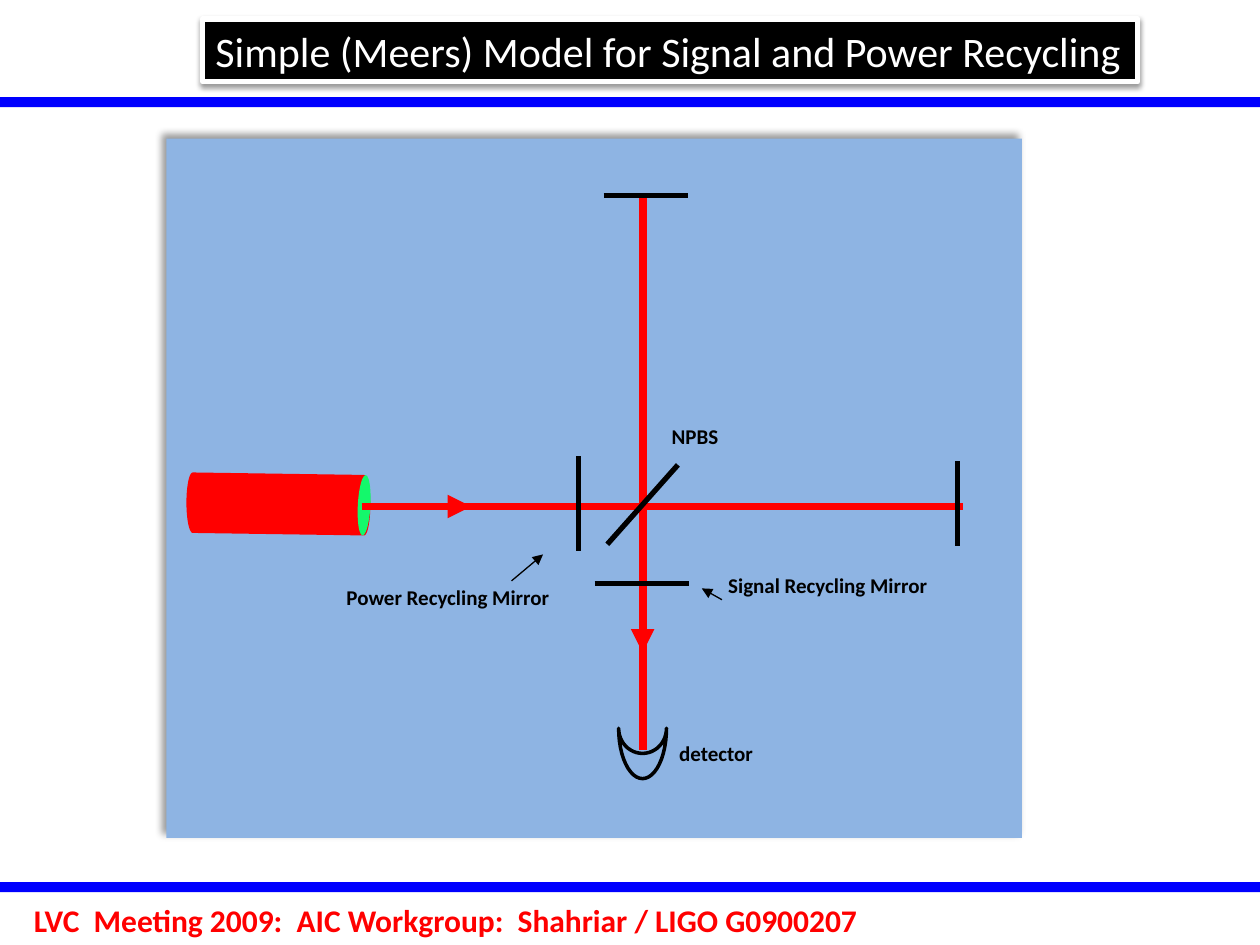
import math
from typing import NamedTuple

import pptx
import pptx.dml.color
import pptx.enum.shapes
import pptx.enum.text
import pptx.oxml
import pptx.oxml.ns
import pptx.util
from pptx.util import Inches

RED, BLACK, WHITE, BLUE = "FF0000", "000000", "FFFFFF", "0000FF"
FONT = "Calibri"


class Line(NamedTuple):
    start: tuple[float, float]
    end: tuple[float, float]
    color: str
    width: float
    arrow: bool = False


class Label(NamedTuple):
    text: str
    left: float
    top: float
    width: float
    height: float


def rgb(value: str) -> pptx.dml.color.RGBColor:
    return pptx.dml.color.RGBColor.from_string(value)


def paint(shape, fill: str | None, line: str | None = None, width: float = 1) -> None:
    shape.shadow.inherit = False
    if fill:
        shape.fill.solid()
        shape.fill.fore_color.rgb = rgb(fill)
    else:
        shape.fill.background()
    if line:
        shape.line.color.rgb = rgb(line)
        shape.line.width = pptx.util.Pt(width)
    else:
        shape.line.fill.background()


def add_shadow(shape, opacity: int, blur: float, distance: float, angle: int) -> None:
    effects = shape._element.spPr.find(pptx.oxml.ns.qn("a:effectLst"))
    effects.append(pptx.oxml.parse_xml(
        f'<a:outerShdw {pptx.oxml.ns.nsdecls("a")} blurRad="{pptx.util.Pt(blur)}" '
        f'dist="{pptx.util.Pt(distance)}" dir="{angle * 60000}" rotWithShape="0">'
        f'<a:srgbClr val="{BLACK}"><a:alpha val="{opacity * 1000}"/></a:srgbClr>'
        '</a:outerShdw>'))


def add_block(page, kind, left: float, top: float, width: float, height: float, fill: str):
    block = page.shapes.add_shape(
        kind, Inches(left), Inches(top), Inches(width), Inches(height))
    paint(block, fill)
    return block


def write(box, text: str, *, size: float, color: str, bold: bool = False,
          inset: float | None = None, wrap: bool = True) -> None:
    frame = box.text_frame
    frame.word_wrap = wrap
    if inset is not None:
        frame.margin_left = frame.margin_right = Inches(inset)
        frame.margin_top = frame.margin_bottom = Inches(inset)
    para = frame.paragraphs[0]
    para.alignment = pptx.enum.text.PP_ALIGN.LEFT
    span = para.add_run()
    span.text = text
    span.font.name, span.font.size = FONT, pptx.util.Pt(size)
    span.font.bold, span.font.color.rgb = bold, rgb(color)


def add_label(page, label: Label, **style) -> None:
    box = page.shapes.add_textbox(*(Inches(value) for value in label[1:]))
    write(box, label.text, **style)


def add_line(page, line: Line) -> None:
    connector = page.shapes.add_connector(
        pptx.enum.shapes.MSO_CONNECTOR.STRAIGHT,
        *(Inches(value) for value in line.start + line.end))
    connector.line.color.rgb = rgb(line.color)
    connector.line.width = pptx.util.Pt(line.width)
    if line.arrow:
        outline = connector.line._get_or_add_ln()
        outline.append(pptx.oxml.parse_xml(
            f'<a:tailEnd {pptx.oxml.ns.nsdecls("a")} type="triangle"/>'))
    connector._element.spPr.append(
        pptx.oxml.parse_xml(f'<a:effectLst {pptx.oxml.ns.nsdecls("a")}/>'))


def arc(x: float, y: float, across: float, down: float, first: int, last: int):
    """Points on an ellipse between two angles in degrees, clockwise from the right."""
    steps = 24
    angles = [math.radians(first + (last - first) * i / steps) for i in range(steps + 1)]
    return [(x + across * math.cos(a), y + down * math.sin(a)) for a in angles]


def add_outline(page, points):
    # Vertices are whole numbers, so they are given in EMU
    vertices = [(Inches(x), Inches(y)) for x, y in points]
    builder = page.shapes.build_freeform(*vertices[0])
    builder.add_line_segments(vertices[1:], close=True)
    return builder.convert_to_shape()


BEAM_X, BEAM_Y = 5.1, 4.02
BEAMS = [
    Line((BEAM_X, 5.95), (BEAM_X, 1.53), RED, 4.5),
    Line((BEAM_X, 4.73), (BEAM_X, 5.18), RED, 4.5, True),
    Line((3.28, BEAM_Y), (3.74, BEAM_Y), RED, 4.5, True),
    Line((2.87, BEAM_Y), (7.64, BEAM_Y), RED, 4.5),
]
MIRRORS = [
    Line((4.59, 3.62), (4.59, 4.37), BLACK, 3),
    Line((4.72, 4.63), (5.47, 4.63), BLACK, 3),
    Line((7.6, 3.66), (7.6, 4.33), BLACK, 3),
    Line((4.79, 1.55), (5.46, 1.55), BLACK, 3),
    Line((5.38, 3.69), (4.82, 4.32), BLACK, 3),
]
POINTERS = [
    Line((4.06, 4.61), (4.31, 4.4), BLACK, 0.75, True),
    Line((5.73, 4.76), (5.57, 4.67), BLACK, 0.75, True),
]
LABELS = [
    Label("detector", 5.39, 5.88, 1.67, 0.53),
    Label("Power Recycling Mirror", 2.75, 4.64, 1.67, 1.08),
    Label("Signal Recycling Mirror", 5.78, 4.54, 1.67, 1.08),
    Label("NPBS", 5.33, 3.36, 0.75, 0.6),
]


def main() -> None:
    deck = pptx.Presentation()
    deck.slide_width, deck.slide_height = Inches(10), Inches(7.5)
    page = deck.slides.add_slide(deck.slide_layouts[5])
    kinds = pptx.enum.shapes.MSO_SHAPE

    # Rules and footer
    for top in (0.77, 7):
        add_block(page, kinds.RECTANGLE, 0, top, 10, 0.08, BLUE)
    footer = "LVC  Meeting 2009:  AIC Workgroup:  Shahriar / LIGO G0900207"
    add_label(page, Label(footer, 0.17, 7.1, 6.81, 0.4),
              size=18, color=RED, bold=True, wrap=False)

    # Title
    title = page.shapes.title
    title.left, title.top = Inches(1.61), Inches(0.15)
    title.width, title.height = Inches(7.42), Inches(0.5)
    paint(title, BLACK, WHITE, 3)
    add_shadow(title, 38, 3.1, 1.6, 90)
    write(title, "Simple (Meers) Model for Signal and Power Recycling",
          size=24, color=WHITE)
    title.text_frame.auto_size = pptx.enum.text.MSO_AUTO_SIZE.NONE
    title.text_frame.vertical_anchor = pptx.enum.text.MSO_ANCHOR.MIDDLE

    # Diagram panel
    panel = add_block(page, kinds.RECTANGLE, 1.32, 1.1, 6.79, 5.55, "8EB4E3")
    add_shadow(panel, 40, 4, 3, 225)

    # Detector: a deep half ellipse with a shallow one cut out
    detector = add_outline(page, arc(BEAM_X, 5.78, 0.19, 0.4, 180, 0)
                           + arc(BEAM_X, 5.78, 0.19, 0.2, 0, 180))
    paint(detector, None, BLACK, 2)

    # Laser: tube and front face
    tube = add_outline(page, arc(1.53, 3.99, 0.05, 0.24, 90, 270)
                       + arc(2.89, 4.01, 0.05, 0.24, 270, 450))
    paint(tube, RED)
    face = add_block(page, kinds.OVAL, 2.84, 3.77, 0.1, 0.48, "14F86B")
    face.rotation = 3

    # Beams, mirrors, pointers and labels
    for line in BEAMS + MIRRORS + POINTERS:
        add_line(page, line)
    for label in LABELS:
        add_label(page, label, size=12, color=BLACK, bold=True, inset=0)

    deck.save("out.pptx")


if __name__ == "__main__":
    main()
